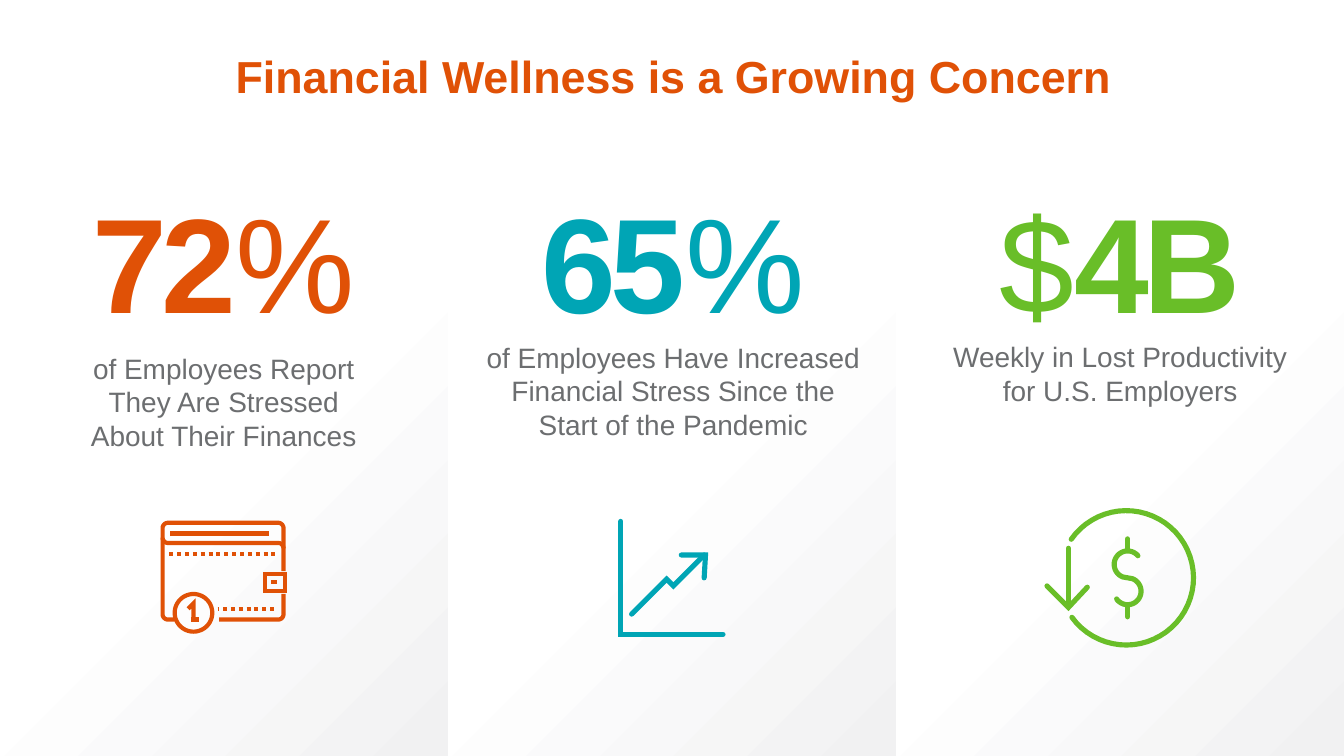
from dataclasses import dataclass
from math import cos, radians, sin

from lxml.etree import SubElement
from pptx import Presentation
from pptx.dml.color import RGBColor
from pptx.enum.shapes import MSO_SHAPE as Preset
from pptx.enum.text import MSO_ANCHOR as Anchor, PP_ALIGN as Align
from pptx.oxml.ns import qn
from pptx.slide import Slide
from pptx.util import Inches, Pt

ORANGE = RGBColor(0xE0, 0x51, 0x06)
TEAL = RGBColor(0x00, 0xA5, 0xB5)
GREEN = RGBColor(0x69, 0xBE, 0x28)
GRAY = RGBColor(0x6C, 0x6E, 0x70)
WHITE = RGBColor(0xFF, 0xFF, 0xFF)
PALE_GRAY = RGBColor(0xF1, 0xF1, 0xF2)
FONT = "Arial"
WIDTH = 10
HEIGHT = WIDTH * 9 / 16
PANEL_WIDTH = WIDTH / 3

Stroke = list[tuple[float, float]]


@dataclass(frozen=True)
class Figure:
    text: str
    bold: bool


@dataclass(frozen=True)
class Stat:
    left: float
    width: float
    height: float
    figures: tuple[Figure, Figure]
    caption: str
    caption_apart: bool
    color: RGBColor
    icon: list[Stroke]
    cap: str
    weight: float


def arc(x: float, y: float, radius: float, start: float, end: float) -> Stroke:
    steps = max(6, int(abs(end - start) / 6))
    angles = [radians(start + (end - start) * i / steps) for i in range(steps + 1)]
    return [(x + radius * cos(a), y + radius * sin(a)) for a in angles]


def dots(left: float, y: float, count: int) -> list[Stroke]:
    starts = [left + 0.76 / 13 * i for i in range(count)]
    return [[(x, y), (x + 0.03, y)] for x in starts]


def wallet() -> list[Stroke]:
    left, top, right, bottom, radius = 1.21, 3.89, 2.11, 4.61, 0.04
    inner_left, inner_right = left + radius, right - radius
    inner_top, inner_bottom = top + radius, bottom - radius
    lower_edge = [(1.63, bottom), *arc(inner_right, inner_bottom, radius, 90, 0), (right, 4.42)]
    body = [
        (right, 4.25),
        *arc(inner_right, inner_top, radius, 0, -90),
        *arc(inner_left, inner_top, radius, -90, -180),
        *arc(inner_left, inner_bottom, radius, 180, 90),
        (1.3, bottom),
    ]
    flap = [*arc(inner_left, 4, radius, 180, 90), *arc(inner_right, 4.08, radius, -90, 0)]
    slot = [(1.28, 3.99), (1.28, 3.97), (1.99, 3.97), (1.99, 3.99)]
    clasp = [(1.97, 4.27), (2.12, 4.27), (2.12, 4.4), (1.97, 4.4), (1.97, 4.27)]
    button = [(2.02, 4.33), (2.06, 4.33)]
    coin = arc(1.44, 4.56, 0.14, 0, 360)
    numeral = [(1.4, 4.53), (1.44, 4.49), (1.44, 4.61)]
    numeral_base = [(1.42, 4.61), (1.48, 4.61)]
    seam_end = [(1.62, 4.53), (1.63, 4.53)]
    return [lower_edge, body, flap, slot, clasp, button, coin, numeral, numeral_base,
            seam_end, *dots(1.26, 4.12, 14), *dots(1.66, 4.53, 7)]


def rising_chart() -> list[Stroke]:
    axes = [(4.62, 3.88), (4.62, 4.72), (5.38, 4.72)]
    trend = [(4.7, 4.57), (4.96, 4.31), (5.01, 4.36), (5.24, 4.13)]
    arrowhead = [(5.07, 4.13), (5.25, 4.13), (5.24, 4.3)]
    return [axes, trend, arrowhead]


def falling_dollar() -> list[Stroke]:
    x = 8.39
    ring = arc(8.38, 4.3, 0.5, 215, 504)
    shaft = [(7.95, 4.08), (7.95, 4.51)]
    arrowhead = [(7.79, 4.36), (7.95, 4.52), (8.09, 4.37)]
    dollar = [*arc(x, 4.2, 0.1, -40, -250), *arc(x, 4.4, 0.1, -70, 145)]
    bars = [[(x, 4.01), (x, 4.09)], [(x, 4.51), (x, 4.59)]]
    return [ring, shaft, arrowhead, dollar, *bars]


STATS = [
    Stat(0.43, 2.47, 2.55, (Figure("72", True), Figure("%", False)),
         "of Employees Report They Are Stressed About Their Finances",
         True, ORANGE, wallet(), "flat", 2.25),
    Stat(3.51, 3, 2.45, (Figure("65", True), Figure("%", False)),
         "of Employees Have Increased Financial Stress Since the Start of the Pandemic",
         False, TEAL, rising_chart(), "rnd", 2.75),
    Stat(6.99, 2.69, 2.93, (Figure("$", False), Figure("4B", True)),
         "Weekly in Lost Productivity for U.S. Employers",
         False, GREEN, falling_dollar(), "rnd", 2.75),
]


def draw_panel(slide: Slide, column: int) -> None:
    panel = slide.shapes.add_shape(
        Preset.RECTANGLE, Inches(column * PANEL_WIDTH), 0, Inches(PANEL_WIDTH), Inches(HEIGHT))
    panel.shadow.inherit = False
    panel.line.fill.background()
    panel.fill.gradient()
    panel.fill.gradient_angle = 315
    stops = panel.fill.gradient_stops
    for stop, color, position in zip(stops, (WHITE, PALE_GRAY), (0.57, 1)):
        stop.color.rgb = color
        stop.position = position


def draw_title(slide: Slide, text: str) -> None:
    title = slide.shapes.title
    title.left, title.top = Inches(1.38), Inches(0.31)
    title.width, title.height = Inches(7.26), Inches(0.4)
    title.text_frame.text = text
    title.text_frame.vertical_anchor = Anchor.TOP
    heading = title.text_frame.paragraphs[0]
    heading.alignment = Align.CENTER
    heading.font.name, heading.font.size, heading.font.bold = FONT, Pt(24), True
    heading.font.color.rgb = ORANGE
    slide.shapes._spTree.append(title._element)


def draw_icon(slide: Slide, stat: Stat) -> None:
    builder = None
    for stroke in stat.icon:
        start, *rest = [(Inches(x), Inches(y)) for x, y in stroke]
        if builder is None:
            builder = slide.shapes.build_freeform(*start)
        else:
            builder.move_to(*start)
        builder.add_line_segments(rest, close=False)
    icon = builder.convert_to_shape()
    icon.shadow.inherit = False
    icon.fill.background()
    icon.line.color.rgb = stat.color
    icon.line.width = Pt(stat.weight)
    outline = icon.line._get_or_add_ln()
    outline.set("cap", stat.cap)
    SubElement(outline, qn("a:miter"), lim="800000")


def draw_stat(slide: Slide, stat: Stat) -> None:
    box = slide.shapes.add_textbox(
        Inches(stat.left), Inches(1.23), Inches(stat.width), Inches(stat.height))
    frame = box.text_frame
    frame.word_wrap = True
    frame.margin_left = frame.margin_right = Inches(0.1)
    frame.margin_top = frame.margin_bottom = Inches(0.1)

    headline = frame.paragraphs[0]
    headline.alignment = Align.CENTER
    for figure in stat.figures:
        run = headline.add_run()
        run.text = figure.text
        run.font.name, run.font.size, run.font.bold = FONT, Pt(72), figure.bold
        run.font.color.rgb = stat.color
        run._r.get_or_add_rPr().set("spc", "-300")

    if stat.caption_apart:
        holder = frame.add_paragraph()
        holder.alignment = Align.CENTER
        holder.space_before = Pt(6)
    else:
        holder = headline
        holder.add_line_break()
    caption = holder.add_run()
    caption.text = stat.caption
    caption.font.name, caption.font.size = FONT, Pt(15)
    caption.font.color.rgb = GRAY


def main() -> None:
    deck = Presentation()
    deck.slide_width, deck.slide_height = Inches(WIDTH), Inches(HEIGHT)
    slide = deck.slides.add_slide(deck.slide_layouts[5])
    for column in range(len(STATS)):
        draw_panel(slide, column)
    for stat in STATS:
        draw_stat(slide, stat)
    draw_title(slide, "Financial Wellness is a Growing Concern")
    for stat in STATS:
        draw_icon(slide, stat)
    deck.save("out.pptx")


if __name__ == "__main__":
    main()
